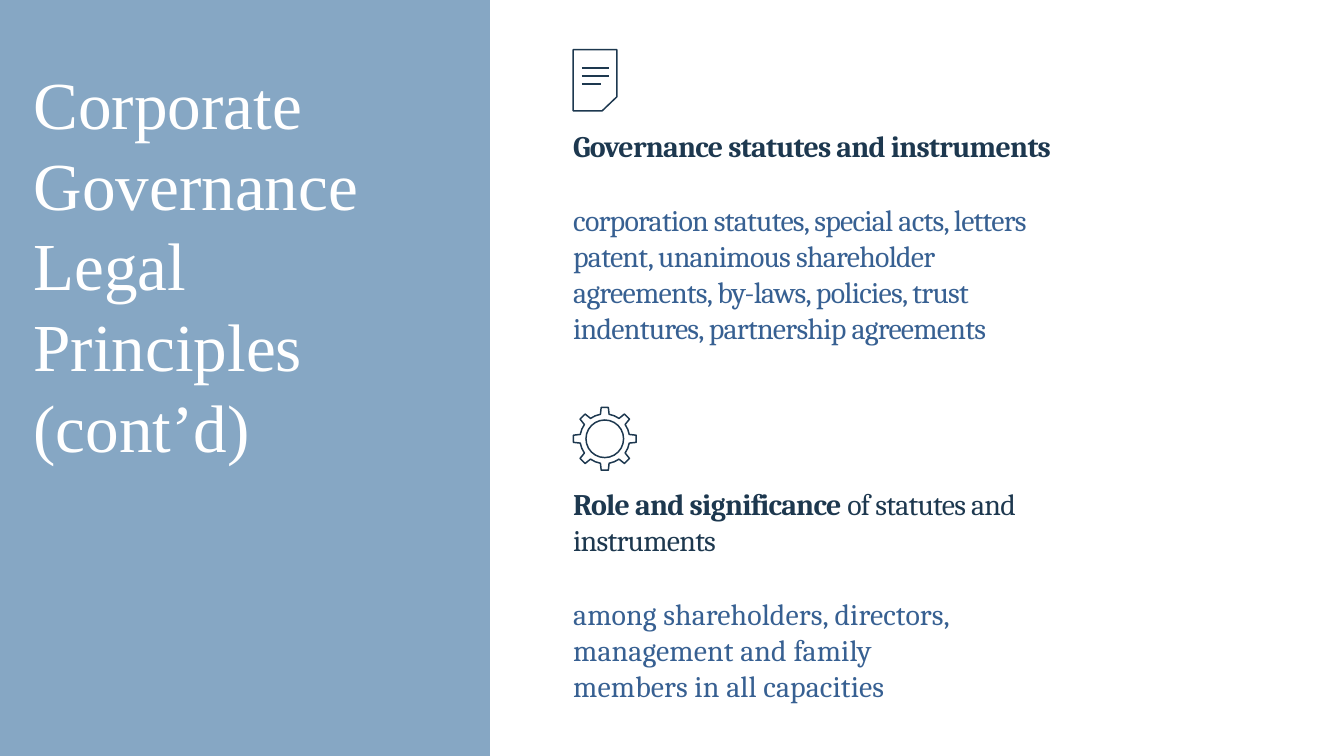
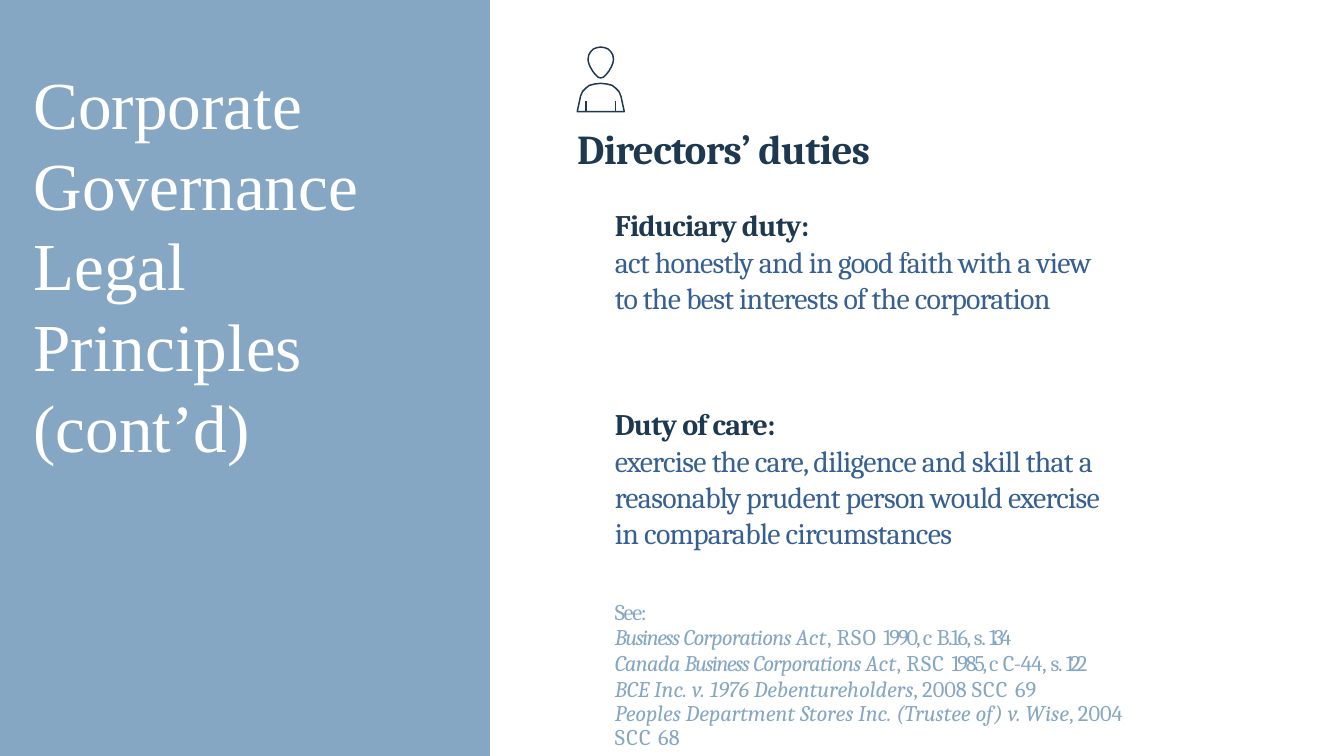
from dataclasses import dataclass
from math import cos, radians, sin

from lxml.etree import SubElement
from pptx import Presentation
from pptx.dml.color import RGBColor
from pptx.enum.shapes import MSO_CONNECTOR, MSO_SHAPE
from pptx.oxml.ns import qn
from pptx.util import Inches, Pt


@dataclass(frozen=True)
class Theme:
    band: str = "86A7C4"
    navy: str = "1D384F"
    blue: str = "376092"
    white: str = "FFFFFF"
    serif: str = "Cambria"
    title_font: str = "Times New Roman"
    title_size: int = 72
    heading_size: int = 44
    body_size: int = 32
    citation_size: int = 24
    icon_line: float = 1.6
    tight: float = -0.8


THEME = Theme()
SLIDE_W, SLIDE_H, BAND_W = 20, 11.25, 7.29
BODY_W = 7.27

# A text is a list of paragraphs; a paragraph is a list of (text, format) runs.
TITLE = "Corporate Governance \nLegal Principles (cont’d)"
BOLD = dict(bold=True)
PLAIN = dict(color=THEME.blue)
LOOSE = dict(color=THEME.blue, spacing=0.1)

STATUTES = [
    [("Governance statutes and instruments", BOLD)],
    [("corporation statutes, special acts, letters patent, unanimous shareholder "
      "agreements, by-laws, policies, trust indentures, partnership agreements", PLAIN)],
]
ROLE = [
    [("Role and significance ", BOLD), ("of statutes and instruments", {})],
    [("among shareholders, directors, management and family \n"
      "members in all capacities", LOOSE)],
]
DUTIES_HEADING = [[("Directors’ duties", BOLD)]]
FIDUCIARY = [
    [("Fiduciary duty:", BOLD)],
    [("act honestly and in good faith with a view to the best interests "
      "of the corporation", PLAIN)],
]
CARE = [
    [("Duty of care:", BOLD)],
    [("exercise the care, diligence and skill that a reasonably prudent person "
      "would exercise in comparable circumstances", PLAIN)],
]


def cite(names, references):
    """Join (text, spacing) pairs: italic names, then upright references."""
    return ([(text, dict(italic=True, spacing=gap)) for text, gap in names]
            + [(text, dict(spacing=gap)) for text, gap in references])


CITATIONS = [
    [("See:", dict(spacing=-1.4))],
    cite([("Business ", -1.6), ("Corporations ", -0.8), ("Act", 0.4)],
         [(", ", 0.4), ("RSO ", 1.3), ("1990, ", -2.2), ("c ", -0.7),
          ("B.16, ", -1.7), ("s. ", -1.2), ("134", -3.9)]),
    cite([("Canada ", -0.7), ("Business ", -1.6), ("Corporations ", -0.8), ("Act", 0.4)],
         [(", ", 0.4), ("RSC ", 1.4), ("1985, ", -2.5), ("c ", -0.7),
          ("C-44, ", -0.4), ("s. ", -1.2), ("122", -4.2)]),
    cite([("BCE Inc. v. 1976 Debentureholders", 0)],
         [(", 2008 ", 0), ("SCC ", 1.4), ("69", 0)]),
    cite([("Peoples Department Stores Inc. (Trustee of) v. Wise", 0)],
         [(", 2004 \n", 0), ("SCC ", 1.4), ("68", 0)]),
]
CITATION_PITCH = [27.6, 26.2, 26.2, 26.2, 25.9]
CITATION_GAPS = [0, 0, 1.8, 1.8, 0]

# Icon outlines in inches; the person's halves are offsets from its axis.
PAGE = [(8.53, 0.74), (9.18, 0.74), (9.18, 1.44), (8.96, 1.65), (8.53, 1.65)]
PAGE_LINES = [(9.06, 1.01), (9.06, 1.13), (8.95, 1.25)]
PAGE_LINES_LEFT = 8.66
GEAR_CENTRE = (9.0, 6.53)
GEAR_HOLE = 0.28
GEAR_TEETH = 8
GEAR_TOOTH = [(-10, 0.37), (-6.5, 0.47), (6.5, 0.47), (10, 0.37), (22.5, 0.37)]
PERSON_AXIS = 8.94
HEAD_HALF = [(0, 0.7), (0.06, 0.71), (0.11, 0.73), (0.15, 0.77), (0.18, 0.82),
             (0.19, 0.89), (0.18, 0.94), (0.16, 0.99), (0.12, 1.06), (0.08, 1.11),
             (0.04, 1.15), (0, 1.16)]
SHOULDER_HALF = [(0, 1.24), (0.09, 1.25), (0.17, 1.27), (0.22, 1.31), (0.27, 1.36),
                 (0.3, 1.43), (0.35, 1.66)]
ARM_OFFSET, ARM_TOP, ARM_BOTTOM = 0.22, 1.51, 1.66


def add_text(slide, paragraphs, left, top, width, height, size=THEME.body_size,
             font=THEME.serif, color=THEME.navy, spacing=THEME.tight, inset=0.04,
             gaps=None, pitch=None):
    """Add a text box; gaps and pitch hold points per paragraph."""
    box = slide.shapes.add_textbox(*map(Inches, (left, top, width, height)))
    frame = box.text_frame
    frame.word_wrap = True
    frame.margin_left = frame.margin_right = frame.margin_bottom = 0
    frame.margin_top = Inches(inset)
    for index, runs in enumerate(paragraphs):
        paragraph = frame.add_paragraph() if index else frame.paragraphs[0]
        if gaps and index:
            paragraph.space_before = Pt(gaps[index])
        if pitch:
            paragraph.line_spacing = Pt(pitch[index])
        for text, style in runs:
            look = dict(color=color, spacing=spacing, bold=False, italic=False) | style
            for part, line in enumerate(text.split("\n")):
                if part:
                    paragraph.add_line_break()
                if not line:
                    continue
                run = paragraph.add_run()
                run.text = line
                run.font.name = font
                run.font.size = Pt(size)
                run.font.bold = look["bold"]
                run.font.italic = look["italic"]
                run.font.color.rgb = RGBColor.from_string(look["color"])
                run._r.get_or_add_rPr().set("spc", str(round(look["spacing"] * 100)))


def ink(line):
    line.color.rgb = RGBColor.from_string(THEME.navy)
    line.width = Pt(THEME.icon_line)


def add_outline(slide, points):
    start, *rest = [(Inches(x), Inches(y)) for x, y in points]
    builder = slide.shapes.build_freeform(*start)
    builder.add_line_segments(rest, close=True)
    outline = builder.convert_to_shape()
    outline.shadow.inherit = False
    outline.fill.background()
    ink(outline.line)


def add_stroke(slide, x1, y1, x2, y2):
    stroke = slide.shapes.add_connector(
        MSO_CONNECTOR.STRAIGHT, *map(Inches, (x1, y1, x2, y2)))
    ink(stroke.line)
    SubElement(stroke._element.spPr, qn("a:effectLst"))


def mirrored(half):
    right = [(PERSON_AXIS + x, y) for x, y in half]
    left = [(PERSON_AXIS - x, y) for x, y in reversed(half) if x]
    return right + left


def add_page_icon(slide):
    add_outline(slide, PAGE)
    for right, y in PAGE_LINES:
        add_stroke(slide, PAGE_LINES_LEFT, y, right, y)


def add_gear_icon(slide):
    cx, cy = GEAR_CENTRE
    rim = []
    for tooth in range(GEAR_TEETH):
        for offset, radius in GEAR_TOOTH:
            angle = radians(tooth * 360 / GEAR_TEETH + offset)
            rim.append((cx + radius * sin(angle), cy - radius * cos(angle)))
    add_outline(slide, rim)
    hole = slide.shapes.add_shape(
        MSO_SHAPE.OVAL, Inches(cx - GEAR_HOLE), Inches(cy - GEAR_HOLE),
        Inches(2 * GEAR_HOLE), Inches(2 * GEAR_HOLE))
    hole.shadow.inherit = False
    hole.fill.background()
    ink(hole.line)


def add_person_icon(slide):
    add_outline(slide, mirrored(HEAD_HALF))
    add_outline(slide, mirrored(SHOULDER_HALF))
    for x in (PERSON_AXIS - ARM_OFFSET, PERSON_AXIS + ARM_OFFSET):
        add_stroke(slide, x, ARM_TOP, x, ARM_BOTTOM)


def add_titled_slide(deck):
    """Add a slide with the blue side band and the shared title."""
    slide = deck.slides.add_slide(deck.slide_layouts[6])
    band = slide.shapes.add_shape(
        MSO_SHAPE.RECTANGLE, 0, 0, Inches(BAND_W), Inches(SLIDE_H))
    band.shadow.inherit = False
    band.fill.solid()
    band.fill.fore_color.rgb = RGBColor.from_string(THEME.band)
    band.line.fill.background()
    add_text(slide, [[(TITLE, {})]], 0.5, 0.88, 6.09, 6.07, size=THEME.title_size,
             font=THEME.title_font, color=THEME.white, spacing=0, inset=0.05,
             pitch=[86.4])
    return slide


def build_statutes(deck):
    slide = add_titled_slide(deck)
    add_page_icon(slide)
    add_gear_icon(slide)
    for paragraphs, top, height in ((STATUTES, 1.86, 3.82), (ROLE, 7.19, 3.28)):
        add_text(slide, paragraphs, 8.53, top, BODY_W, height, gaps=[0, 41])


def build_duties(deck):
    slide = add_titled_slide(deck)
    add_person_icon(slide)
    add_text(slide, DUTIES_HEADING, 8.59, 1.79, BODY_W, 1.85, size=THEME.heading_size)
    for paragraphs, top in ((FIDUCIARY, 3.04), (CARE, 6)):
        add_text(slide, paragraphs, 9.15, top, BODY_W, 3.27, gaps=[0, 1.2])
    add_text(slide, CITATIONS, 9.15, 8.9, 8.93, 1.92, size=THEME.citation_size,
             color=THEME.band, inset=0.02, gaps=CITATION_GAPS, pitch=CITATION_PITCH)


def main():
    deck = Presentation()
    deck.slide_width, deck.slide_height = Inches(SLIDE_W), Inches(SLIDE_H)
    build_statutes(deck)
    build_duties(deck)
    deck.save("out.pptx")


if __name__ == "__main__":
    main()
